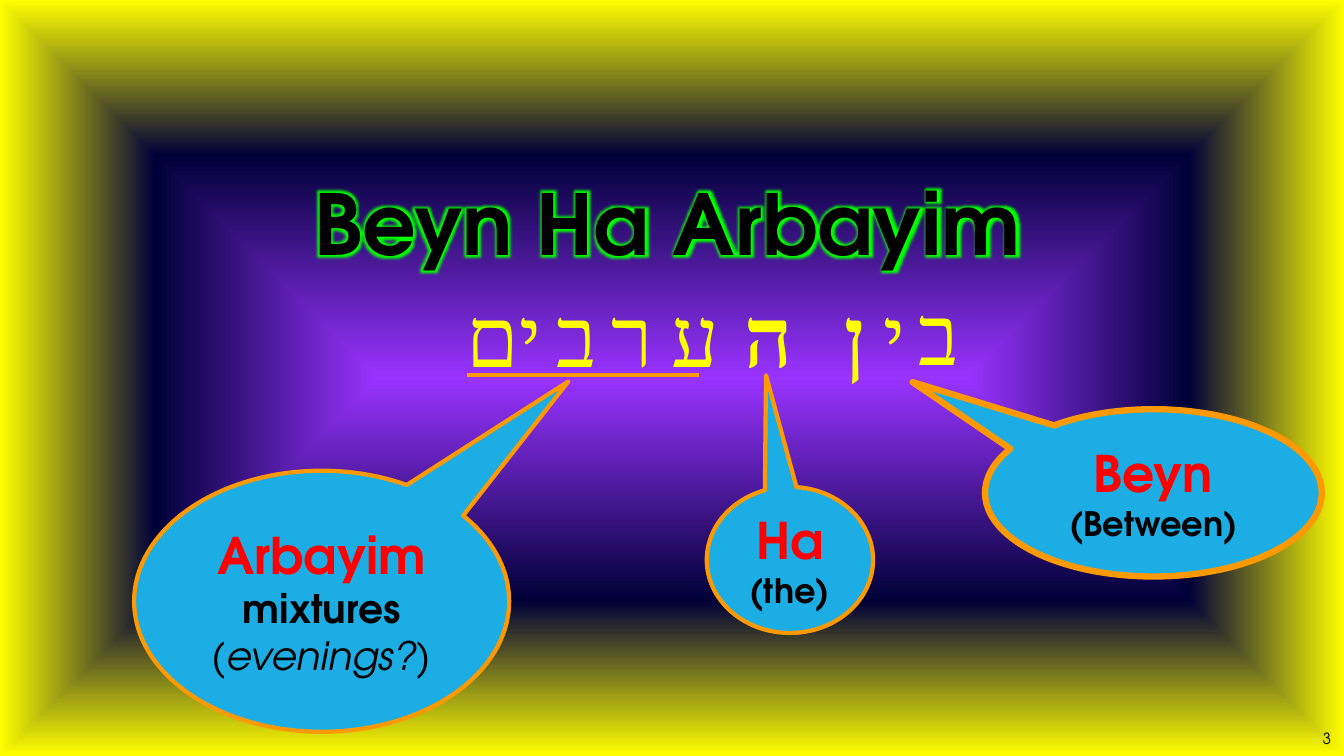
import lxml.etree
import pptx
import pptx.dml.color
import pptx.enum.shapes
import pptx.enum.text
import pptx.oxml
import pptx.oxml.ns
import pptx.util

Inches = pptx.util.Inches
Pt = pptx.util.Pt
ALIGN = pptx.enum.text.PP_ALIGN
ANCHOR = pptx.enum.text.MSO_ANCHOR
qn = pptx.oxml.ns.qn
NAMESPACE = 'xmlns:a="http://schemas.openxmlformats.org/drawingml/2006/main"'
SANS = "TeX Gyre Adventor"
SERIF = "Times New Roman"
ORANGE = "FF9900"


def rgb(code):
    return pptx.dml.color.RGBColor.from_string(code)


def style(span, font, size, color, bold=False, italic=False):
    span.font.name = font
    span.font.size = Pt(size)
    span.font.bold = bold
    span.font.italic = italic
    span.font.color.rgb = rgb(color)


deck = pptx.Presentation()
deck.slide_width = Inches(13.33)
deck.slide_height = Inches(7.5)
page = deck.slides.add_slide(deck.slide_layouts[6])

page.background.fill.solid()
solid = page.element.find(".//" + qn("p:bgPr")).find(qn("a:solidFill"))
stops = "".join(
    f'<a:gs pos="{percent * 1000}"><a:srgbClr val="{color}"/></a:gs>'
    for percent, color in [(0, "9933FF"), (59, "000038"), (100, "FFFF00")]
)
gradient = pptx.oxml.parse_xml(
    f'<a:gradFill {NAMESPACE} rotWithShape="1"><a:gsLst>{stops}</a:gsLst><a:path path="shape">'
    '<a:fillToRect l="50000" t="50000" r="50000" b="50000"/></a:path></a:gradFill>'
)
solid.getparent().replace(solid, gradient)

title = page.shapes.add_textbox(Inches(1.12), Inches(1.65), Inches(11), Inches(1.3))
title.text_frame.word_wrap = True
para = title.text_frame.paragraphs[0]
para.text = "Beyn Ha Arbayim"
para.alignment = ALIGN.CENTER
para.space_before = Pt(9)
span = para.runs[0]
style(span, SANS, 60, "000000", bold=True)
properties = span.font._element
properties.insert(0, pptx.oxml.parse_xml(
    f'<a:ln {NAMESPACE} w="9525"><a:solidFill><a:srgbClr val="F725E8"/></a:solidFill></a:ln>'
))
properties.find(qn("a:solidFill")).addnext(pptx.oxml.parse_xml(
    f'<a:effectLst {NAMESPACE}><a:glow rad="101600"><a:srgbClr val="00FF00"/></a:glow></a:effectLst>'
))

letters = [
    ("ב", 9.01, 2.74, 0.35, False),
    ("י", 8.66, 2.76, 0.43, False),
    ("ן", 8.28, 2.76, 0.48, True),
    ("ה", 7.29, 2.76, 0.63, True),
    ("ע", 6.56, 2.76, 0.58, False),
    ("ר", 5.97, 2.76, 0.6, False),
    ("ב", 5.42, 2.76, 0.58, False),
    ("י", 5.05, 2.76, 0.43, False),
    ("ם", 4.53, 2.76, 0.63, False),
]
for index, (letter, left, top, width, bold) in enumerate(letters):
    box = page.shapes.add_textbox(Inches(left), Inches(top), Inches(width), Inches(1.11))
    box.text_frame.word_wrap = index == 0
    box.text_frame.auto_size = pptx.enum.text.MSO_AUTO_SIZE.SHAPE_TO_FIT_TEXT
    box.text_frame.text = letter
    span = box.text_frame.paragraphs[0].runs[0]
    style(span, SERIF, 60, "FFFF00", bold=bold)
    complex_font = lxml.etree.SubElement(span.font._element, qn("a:cs"))
    complex_font.set("typeface", SERIF)

number = page.shapes.add_textbox(Inches(12.82), Inches(7.17), Inches(0.48), Inches(0.3))
number.text_frame.word_wrap = True
number.text_frame.vertical_anchor = ANCHOR.BOTTOM
number.text_frame.text = "3"
number.text_frame.paragraphs[0].alignment = ALIGN.RIGHT
style(number.text_frame.paragraphs[0].runs[0], SANS, 11, "000000")

callouts = [
    ((9.77, 4.06, 3.34, 1.66), (-0.715, -0.662), 4.5,
     [("Beyn", 36, "FF0000", True, False), ("(Between)", 24, "000000", True, False)]),
    ((7.01, 4.83, 1.65, 1.45), (-0.144, -1.264), 3,
     [("Ha", 36, "FF0000", True, False), ("(the)", 24, "000000", True, False)]),
    ((1.33, 4.67, 3.72, 2.59), (0.658, -0.842), 3,
     [("Arbayim", 36, "FF0000", True, False), ("mixtures", 28, "000000", True, False),
      ("(evenings?)", 28, "000000", False, True)]),
]
for bounds, pointer, weight, lines in callouts:
    callout = page.shapes.add_shape(
        pptx.enum.shapes.MSO_SHAPE.OVAL_CALLOUT, *[Inches(length) for length in bounds]
    )
    callout.adjustments[0], callout.adjustments[1] = pointer
    callout.shadow.inherit = False
    callout.fill.solid()
    callout.fill.fore_color.rgb = rgb("1CADE4")
    callout.line.color.rgb = rgb(ORANGE)
    callout.line.width = Pt(weight)
    callout.text_frame.word_wrap = True
    callout.text_frame.vertical_anchor = ANCHOR.MIDDLE
    para = callout.text_frame.paragraphs[0]
    para.text = "\v".join(line[0] for line in lines)
    para.alignment = ALIGN.CENTER
    for span, (words, size, color, bold, italic) in zip(para.runs, lines):
        style(span, SANS, size, color, bold, italic)

underline = page.shapes.add_connector(
    pptx.enum.shapes.MSO_CONNECTOR.STRAIGHT, Inches(4.63), Inches(3.72), Inches(6.93), Inches(3.72)
)
underline.line.color.rgb = rgb(ORANGE)
underline.line.width = Pt(3)
lxml.etree.SubElement(underline.element.spPr, qn("a:effectLst"))

deck.save("out.pptx")
